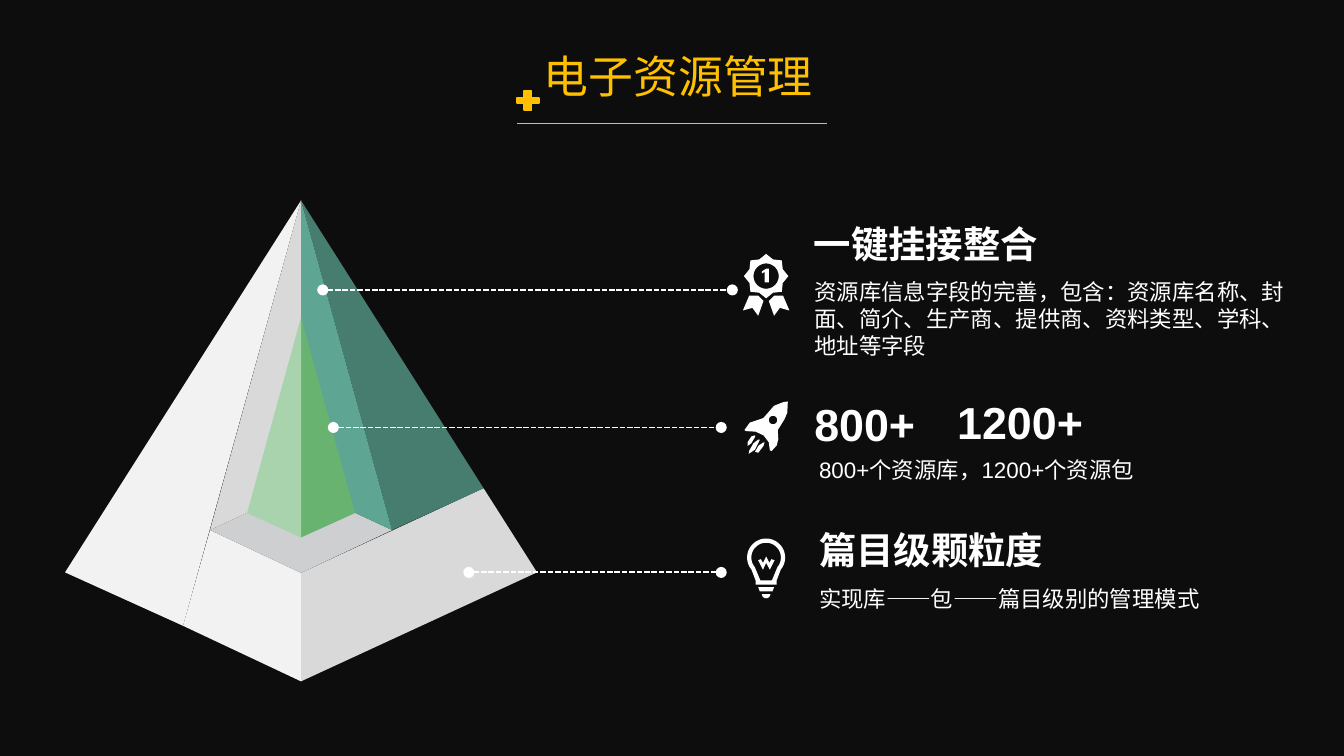
import math

import pptx
import pptx.dml.color
import pptx.enum.dml
import pptx.enum.shapes
import pptx.enum.text
import pptx.oxml.ns
import pptx.util
from lxml import etree

Cm = pptx.util.Cm
qn = pptx.oxml.ns.qn
hue = pptx.dml.color.RGBColor.from_string
GOLD, WHITE, PALE, GREY = "FFC000", "FFFFFF", "F2F2F2", "D9D9D9"

deck = pptx.Presentation()
deck.slide_width, deck.slide_height = Cm(25.4), Cm(14.29)
slide = deck.slides.add_slide(deck.slide_layouts[5])
slide.background.fill.solid()
slide.background.fill.fore_color.rgb = hue("0D0D0D")
shapes = slide.shapes


def write(box, text, size=12, color=WHITE, bold=False, font="Arial", align=None):
    frame = box.text_frame
    frame.word_wrap = True
    frame.text = text
    par = frame.paragraphs[0]
    par.alignment = align
    run = par.runs[0].font
    run.size, run.bold, run.name = pptx.util.Pt(size), bold, font
    run.color.rgb = hue(color)


def draw(color, *loops):
    """Fill closed outlines given in cm; an inner outline cuts a hole."""
    paths = [[(Cm(x), Cm(y)) for x, y in loop] for loop in loops]
    pen = shapes.build_freeform(*paths[0][0])
    for i, points in enumerate(paths):
        if i:
            pen.move_to(*points[0])
        pen.add_line_segments(points[1:], close=True)
    shape = pen.convert_to_shape()
    shape.shadow.inherit = False
    shape.fill.solid()
    shape.fill.fore_color.rgb = hue(color)
    shape.line.fill.background()


# Title
title = shapes.title
title.left, title.top, title.width, title.height = Cm(9.76), Cm(0.79), Cm(6.12), Cm(1.27)
write(title, "电子资源管理", size=24, color=GOLD, align=pptx.enum.text.PP_ALIGN.CENTER)
title.text_frame.vertical_anchor = pptx.enum.text.MSO_ANCHOR.MIDDLE
plus = shapes.add_shape(pptx.enum.shapes.MSO_SHAPE.CROSS,
                        Cm(9.77), Cm(1.72), Cm(0.41), Cm(0.36))
plus.adjustments[0] = 0.375
plus.shadow.inherit = False
plus.fill.solid()
plus.fill.fore_color.rgb = plus.line.color.rgb = hue(GOLD)
plus.line.width = pptx.util.Pt(1)

# Pyramid: corners, then faces from back to front
mid = 5.69
top, back, front, base = (mid, 3.79), (mid, 9.22), (mid, 10.83), (mid, 12.88)
left, right = (1.23, 10.82), (10.15, 10.82)
cut, notch = (3.46, 11.83), (9.14, 9.23)
west, east = (mid - 1.72, 10.02), (mid + 1.72, 10.02)
tip, foot = (mid, 6), (mid, 10.16)
faces = [
    (PALE, [left, top, cut]),
    (GREY, [west, back, top]),
    (PALE, [base, front, west, cut]),
    (GREY, [front, notch, right, base]),
    ("CECFD1", [front, west, back, east]),
    ("467D6F", [east, top, notch]),
    ("5FA593", [east, back, top]),
    ("69B370", [(mid + 1.02, 9.7), tip, foot]),
    ("A8D3AC", [(mid - 1.02, 9.7), tip, foot]),
]
for color, face in faces:
    draw(color, face)

# Title rule and leader lines: start, end, height
links = [(9.78, 15.62, 2.34), (6.1, 13.84, 5.48), (6.3, 13.63, 8.08), (8.86, 13.63, 10.82)]
for i, (start, end, y) in enumerate(links):
    link = shapes.add_connector(pptx.enum.shapes.MSO_CONNECTOR.STRAIGHT,
                                Cm(start), Cm(y), Cm(end), Cm(y))
    link.line.color.rgb = hue(WHITE if i else GOLD)
    link.line.width = pptx.util.Pt(1 if i else 0.5)
    props = link.element.spPr
    if i:
        link.line.dash_style = pptx.enum.dml.MSO_LINE.SQUARE_DOT
        for tag in ("a:headEnd", "a:tailEnd"):
            etree.SubElement(props.find(qn("a:ln")), qn(tag), type="oval")
    etree.SubElement(props, qn("a:effectLst"))

# Icons share one centre line; unit arcs are scaled into place
axis = 14.48
ring, dome, bowl = [
    [(math.cos(math.radians(a)), math.sin(math.radians(a))) for a in range(*span)]
    for span in ((0, 360, 15), (140, 401, 10), (0, 181, 15))]

# Medal
badge = []
for i in range(16):
    turn, reach = math.pi * i / 8, 0.34 if i % 2 else 0.42
    badge.append((axis + reach * math.cos(turn), 5.22 + reach * math.sin(turn)))
draw(WHITE, badge, [(axis + 0.24 * x, 5.22 + 0.24 * y) for x, y in ring])
draw(WHITE, [(14.4, 5.13), (14.4, 5.17), (14.45, 5.14), (14.45, 5.34),
             (14.53, 5.34), (14.53, 5.08), (14.48, 5.08)])
tail = [(0.32, 5.59), (0.44, 5.87), (0.26, 5.82), (0.15, 5.97), (0.05, 5.69), (0.15, 5.59)]
for side in (-1, 1):
    draw(WHITE, [(axis + side * x, y) for x, y in tail])

# Rocket
hull = [(14.89, 7.59), (14.88, 7.8), (14.83, 7.92), (14.7, 8.13), (14.71, 8.3),
        (14.68, 8.42), (14.58, 8.53), (14.55, 8.51), (14.53, 8.36), (14.43, 8.23),
        (14.28, 8.16), (14.1, 8.15), (14.07, 8.13), (14.17, 7.99), (14.38, 7.92),
        (14.43, 7.9), (14.63, 7.67), (14.81, 7.6)]
draw(WHITE, hull, [(14.61 + 0.08 * x, 7.94 + 0.08 * y) for x, y in ring])
flames = [
    [(14.45, 8.36), (14.43, 8.43), (14.33, 8.56), (14.27, 8.54), (14.34, 8.42), (14.42, 8.37)],
    [(14.36, 8.31), (14.35, 8.34), (14.27, 8.5), (14.15, 8.58), (14.16, 8.52), (14.24, 8.38),
     (14.33, 8.31)],
    [(14.27, 8.23), (14.27, 8.26), (14.2, 8.38), (14.13, 8.43), (14.13, 8.36), (14.2, 8.25)],
]
for flame in flames:
    draw(WHITE, flame)

# Light bulb
glass = [(axis + 0.36 * x, 10.54 + 0.36 * y) for x, y in dome]
inner = [(axis + 0.28 * x, 10.54 + 0.28 * y) for x, y in dome]
draw(WHITE,
     glass + [(axis + x, y) for x, y in ((0.2, 10.97), (0.2, 11.05), (-0.2, 11.05), (-0.2, 10.97))],
     inner + [(axis + 0.11, 10.97), (axis - 0.11, 10.97)])
draw(WHITE, [(14.33, 11.1), (14.63, 11.1), (14.6, 11.18), (14.36, 11.18)])
draw(WHITE, [(axis + 0.08 * x, 11.23 + 0.08 * y) for x, y in bowl])
draw(WHITE, [(14.33, 10.59), (14.42, 10.77), (14.48, 10.64), (14.55, 10.77), (14.64, 10.59),
             (14.58, 10.57), (14.54, 10.64), (14.48, 10.52), (14.42, 10.64), (14.38, 10.57)])

# Captions: place, text, format
big = dict(size=24, bold=True)
head = dict(size=20, bold=True)
notes = [
    ((15.13, 4.06, 5.84, 1.09), "一键挂接整合", head),
    ((15.14, 5.14, 9.55, 1.78),
     "资源库信息字段的完善，包含：资源库名称、封面、简介、生产商、提供商、资料类型、学科、地址等字段", {}),
    ((15.14, 7.37, 3.05, 1.27), "800+", big),
    ((17.84, 7.34, 3.73, 1.27), "1200+", big),
    ((15.23, 8.5, 9.55, 0.76), "800+个资源库，1200+个资源包", {}),
    ((15.23, 9.84, 6.17, 1.09), "篇目级颗粒度", dict(head, font="Noto Sans CJK SC")),
    ((15.23, 10.93, 9.58, 0.76), "实现库——包——篇目级别的管理模式", {}),
]
for place, text, style in notes:
    write(shapes.add_textbox(*map(Cm, place)), text, **style)

deck.save("out.pptx")
